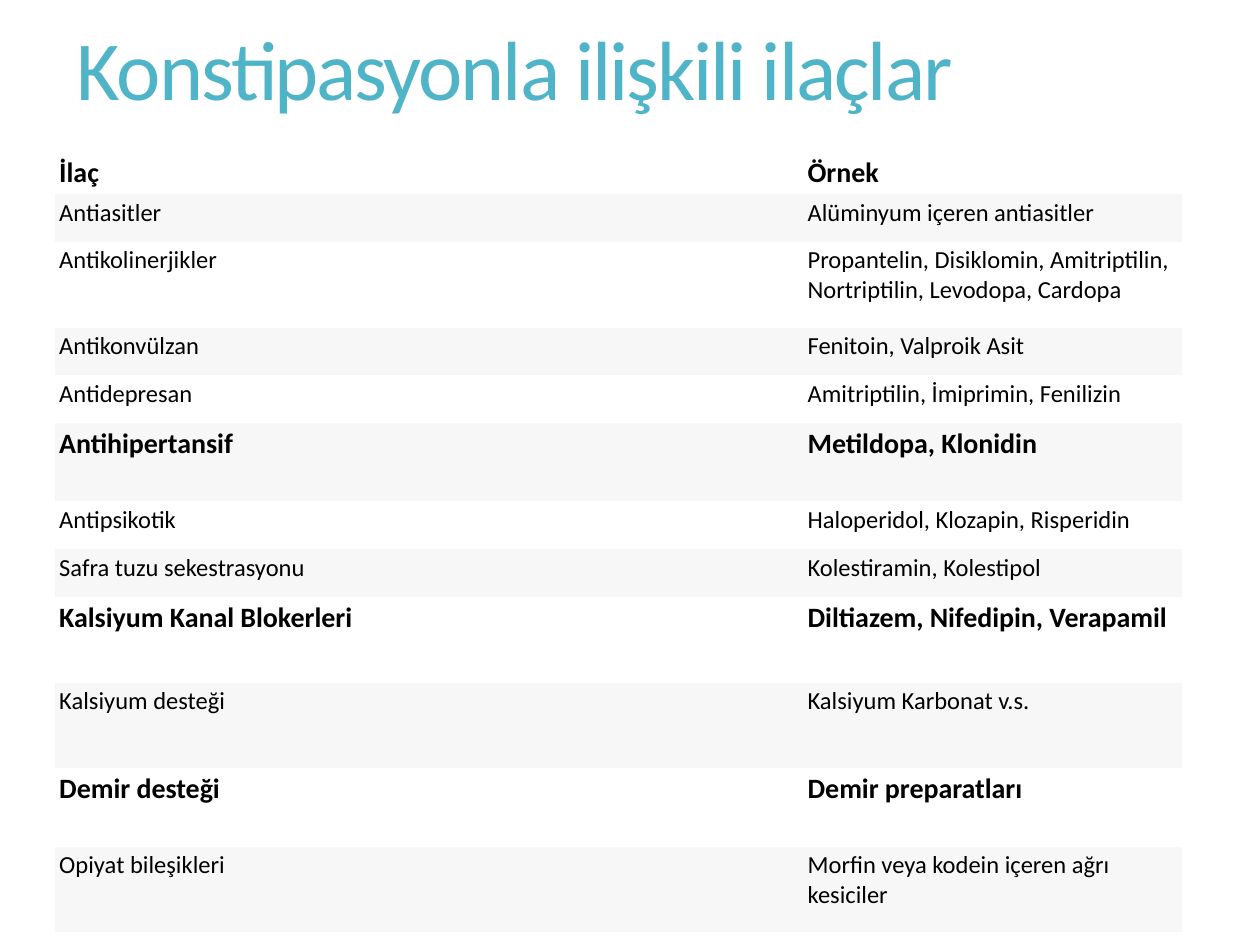
"""Build a slide with a table of drugs related to constipation."""
from dataclasses import dataclass

from pptx import Presentation
from pptx.dml.color import RGBColor
from pptx.enum.text import MSO_ANCHOR, PP_ALIGN
from pptx.util import Inches, Pt

TITLE = "Konstipasyonla ilişkili ilaçlar"
LOW, MID, TALL = 0.38, 0.62, 0.68
ROWS = [
    ("İlaç", "Örnek", LOW, True),
    ("Antiasitler", "Alüminyum içeren antiasitler", LOW, False),
    ("Antikolinerjikler",
     "Propantelin, Disiklomin, Amitriptilin, Nortriptilin, Levodopa, Cardopa",
     TALL, False),
    ("Antikonvülzan", "Fenitoin, Valproik Asit", LOW, False),
    ("Antidepresan", "Amitriptilin, İmiprimin, Fenilizin", LOW, False),
    ("Antihipertansif", "Metildopa, Klonidin", MID, True),
    ("Antipsikotik", "Haloperidol, Klozapin, Risperidin", LOW, False),
    ("Safra tuzu sekestrasyonu", "Kolestiramin, Kolestipol", LOW, False),
    ("Kalsiyum Kanal Blokerleri", "Diltiazem, Nifedipin, Verapamil",
     TALL, True),
    ("Kalsiyum desteği", "Kalsiyum Karbonat v.s.", TALL, False),
    ("Demir desteği", "Demir preparatları", MID, True),
    ("Opiyat bileşikleri", "Morfin veya kodein içeren ağrı kesiciler",
     TALL, False),
]
COLS = (4.88, 1.06, 3.0)
LEFT, TOP = 0.44, 1.16
PLAIN = "{2D5ABB26-0587-4C30-8999-92F81FD0307C}"


@dataclass(frozen=True)
class Theme:
    """Colours, font and type sizes."""
    font: str = "Calibri"
    title: str = "50B4C8"
    ink: str = "000000"
    bands: tuple = ("FFFFFF", "F7F7F7")
    head: int = 48
    bold: int = 16
    body: int = 14
    pad: float = 0.03


THEME = Theme()


def style(para, size, color, bold=False):
    """Set the font of a paragraph."""
    font = para.font
    font.name, font.size, font.bold = THEME.font, Pt(size), bold
    font.color.rgb = RGBColor.from_string(color)


def add_title(slide):
    """Place and format the title."""
    title = slide.shapes.title
    title.left, title.top = Inches(0.51), 0
    title.width, title.height = Inches(8.84), Inches(TOP)
    frame = title.text_frame
    frame.text = TITLE
    frame.word_wrap = True
    frame.vertical_anchor = MSO_ANCHOR.MIDDLE
    para = frame.paragraphs[0]
    para.alignment = PP_ALIGN.LEFT
    para.line_spacing = 0.9
    style(para, THEME.head, THEME.title)
    para.runs[0]._r.get_or_add_rPr().set("spc", "-120")


def fill_cell(cell, text, band, bold):
    """Write one cell on its band colour."""
    cell.margin_left = cell.margin_right = Inches(THEME.pad)
    cell.margin_top = cell.margin_bottom = Inches(THEME.pad)
    cell.fill.solid()
    cell.fill.fore_color.rgb = RGBColor.from_string(band)
    cell.text = text
    size = THEME.bold if bold else THEME.body
    style(cell.text_frame.paragraphs[0], size, THEME.ink, bold)


def add_drugs(slide):
    """Add the banded table of drugs."""
    high = sum(row[2] for row in ROWS)
    table = slide.shapes.add_table(
        len(ROWS), len(COLS), Inches(LEFT), Inches(TOP),
        Inches(sum(COLS)), Inches(high)).table
    table._tbl.tblPr[0].text = PLAIN
    table.first_row = table.horz_banding = False
    for col, width in zip(table.columns, COLS):
        col.width = Inches(width)
    for i, (drug, sample, height, bold) in enumerate(ROWS):
        row = table.rows[i]
        row.height = Inches(height)
        for cell, text in zip(row.cells, (drug, "", sample)):
            fill_cell(cell, text, THEME.bands[i % 2], bold)
    for cell in table.rows[0].cells:
        cell.vertical_anchor = MSO_ANCHOR.BOTTOM


def main():
    """Build and save the deck."""
    deck = Presentation()
    deck.slide_width, deck.slide_height = Inches(10), Inches(7.5)
    slide = deck.slides.add_slide(deck.slide_layouts[5])
    add_title(slide)
    add_drugs(slide)
    deck.save("out.pptx")


if __name__ == "__main__":
    main()
